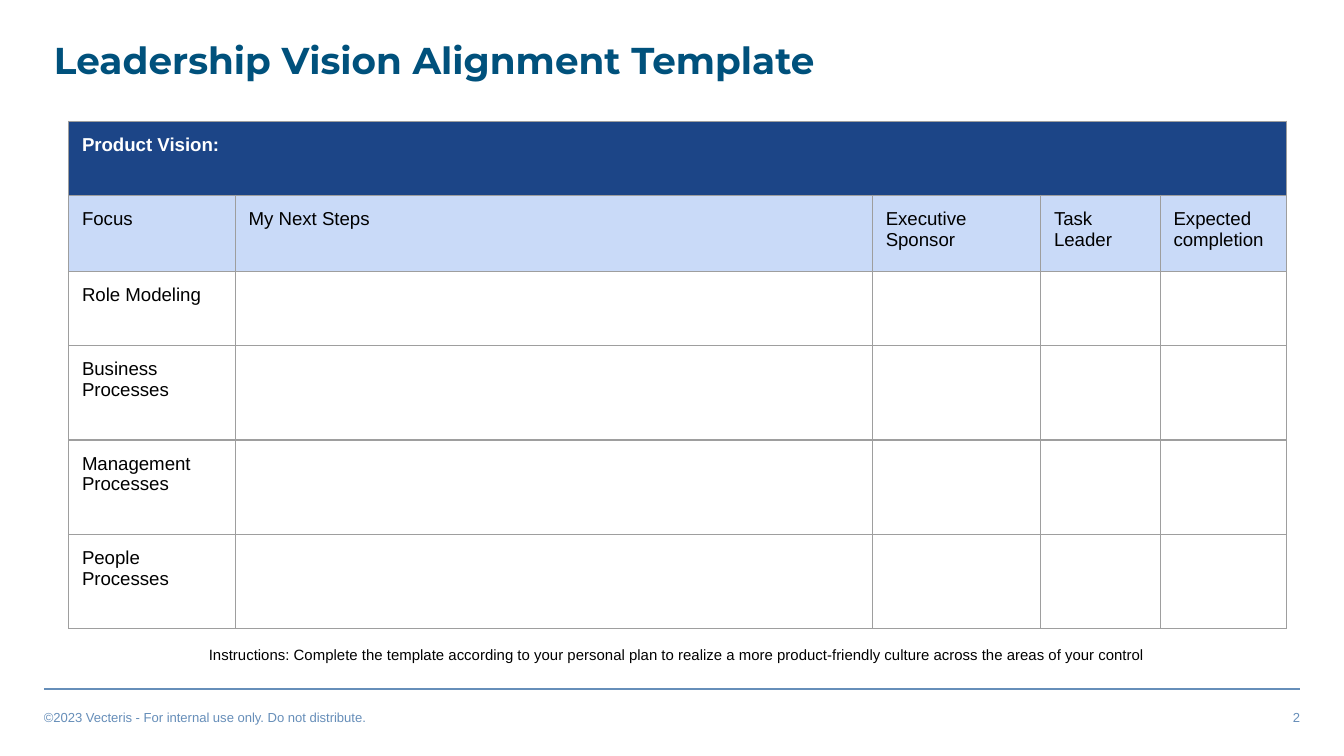
from collections import namedtuple
from dataclasses import dataclass

from lxml import etree
from pptx import Presentation
from pptx import util as u
from pptx.dml import color
from pptx.enum import shapes, text
from pptx.oxml import ns

Box = namedtuple("Box", "left top width height")


@dataclass(frozen=True)
class Theme:
    heading_font: str = "Montserrat"
    body_font: str = "Arial"
    title_size: float = 20
    table_size: float = 10
    note_size: float = 8
    footer_size: float = 7
    title: str = "00517C"
    footer: str = "668EB9"
    vision: str = "1C4587"
    header: str = "C9DAF8"
    white: str = "FFFFFF"
    black: str = "000000"
    border: str = "9E9E9E"
    border_width: float = 0.75


THEME = Theme()
WIDE_INSET, INSET_X, INSET_Y = 0.25, 0.18, 0.1

COLUMN_WIDTHS = [3.15, 12.04, 3.18, 2.26, 2.39]
ROW_HEIGHTS = [1.4, 1.45, 1.4, 1.78, 1.78, 1.78]
HEADERS = ["Focus", "My Next Steps", "Executive Sponsor", "Task Leader",
           "Expected completion"]
FOCUS_AREAS = ["Role Modeling", "Business Processes", "Management Processes",
               "People Processes"]


def rgb(value):
    return color.RGBColor.from_string(value)


def set_text(frame, words, size, tint, font=THEME.body_font, bold=False,
             align=text.PP_ALIGN.LEFT):
    frame.text = words
    para = frame.paragraphs[0]
    para.alignment = align
    for span in para.runs:
        span.font.name = font
        span.font.size = u.Pt(size)
        span.font.bold = bold
        span.font.color.rgb = rgb(tint)


def set_insets(target, across, down):
    target.margin_left = target.margin_right = u.Cm(across)
    target.margin_top = target.margin_bottom = u.Cm(down)


def add_label(page, box, words, size, tint, insets, align):
    label = page.shapes.add_textbox(*(u.Cm(length) for length in box))
    frame = label.text_frame
    frame.word_wrap = True
    set_insets(frame, *insets)
    set_text(frame, words, size, tint, align=align)


def add_title(page, box):
    title = page.shapes.title
    title.left, title.top, title.width, title.height = map(u.Cm, box)
    frame = title.text_frame
    frame.word_wrap = True
    frame.auto_size = text.MSO_AUTO_SIZE.NONE
    frame.vertical_anchor = text.MSO_ANCHOR.TOP
    set_insets(frame, INSET_X, INSET_Y)
    set_text(frame, "Leadership Vision Alignment Template", THEME.title_size,
             THEME.title, THEME.heading_font, bold=True)


def set_borders(cell):
    properties = cell._tc.get_or_add_tcPr()
    for side in ("a:lnL", "a:lnR", "a:lnT", "a:lnB"):
        line = etree.SubElement(properties, ns.qn(side),
                                w=str(u.Pt(THEME.border_width)))
        fill = etree.SubElement(line, ns.qn("a:solidFill"))
        etree.SubElement(fill, ns.qn("a:srgbClr"), val=THEME.border)


def add_plan_table(page, box):
    table = page.shapes.add_table(len(ROW_HEIGHTS), len(COLUMN_WIDTHS),
                                  *map(u.Cm, box)).table
    table.first_row = table.horz_banding = False
    for column, width in zip(table.columns, COLUMN_WIDTHS):
        column.width = u.Cm(width)
    for row, height in zip(table.rows, ROW_HEIGHTS):
        row.height = u.Cm(height)

    # Vision banner, header row, then one row for each focus area
    blanks = [""] * (len(COLUMN_WIDTHS) - 1)
    rows = [["Product Vision:"] + blanks, HEADERS]
    rows += [[area] + blanks for area in FOCUS_AREAS]
    fills = [THEME.vision, THEME.header] + [THEME.white] * len(FOCUS_AREAS)
    for index, (row, words, fill) in enumerate(zip(table.rows, rows, fills)):
        banner = index == 0
        for cell, word in zip(row.cells, words):
            set_borders(cell)
            cell.fill.solid()
            cell.fill.fore_color.rgb = rgb(fill)
            set_insets(cell, WIDE_INSET, WIDE_INSET)
            set_text(cell.text_frame, word, THEME.table_size,
                     THEME.white if banner else THEME.black, bold=banner)
    table.cell(0, 0).merge(table.cell(0, len(COLUMN_WIDTHS) - 1))


def add_instructions(page, box):
    add_label(page, box,
              "Instructions: Complete the template according to your personal "
              "plan to realize a more product-friendly culture across the "
              "areas of your control", THEME.note_size, THEME.black,
              (WIDE_INSET, WIDE_INSET), text.PP_ALIGN.CENTER)


def add_footer(page, box):
    # Rule along the top edge, inset to line up with the text
    rule = page.shapes.add_connector(
        shapes.MSO_CONNECTOR.STRAIGHT,
        u.Cm(box.left + INSET_X), u.Cm(box.top),
        u.Cm(box.left + box.width - INSET_X), u.Cm(box.top))
    rule.line.color.rgb = rgb(THEME.footer)
    rule.line.width = u.Pt(1)
    etree.SubElement(rule._element.spPr, ns.qn("a:effectLst"))

    # Copyright on the left, page number on the right
    width, height = 10.16, 0.48
    top = box.top + box.height - height
    labels = [
        (box.left, "©2023 Vecteris - For internal use only. Do not distribute.",
         text.PP_ALIGN.LEFT),
        (box.left + box.width - width, "2", text.PP_ALIGN.RIGHT),
    ]
    for left, words, align in labels:
        add_label(page, Box(left, top, width, height), words,
                  THEME.footer_size, THEME.footer, (INSET_X, INSET_Y), align)


def main():
    deck = Presentation()
    deck.slide_width, deck.slide_height = u.Cm(25.4), u.Cm(14.29)
    page = deck.slides.add_slide(deck.slide_layouts[5])
    add_footer(page, Box(0.65, 13.02, 24.1, 0.77))
    add_title(page, Box(0.84, 0.61, 18.54, 1.45))
    add_plan_table(page, Box(1.3, 2.29, sum(COLUMN_WIDTHS), sum(ROW_HEIGHTS)))
    add_instructions(page, Box(1.35, 12.04, 22.9, 0.86))
    deck.save("out.pptx")


if __name__ == "__main__":
    main()
